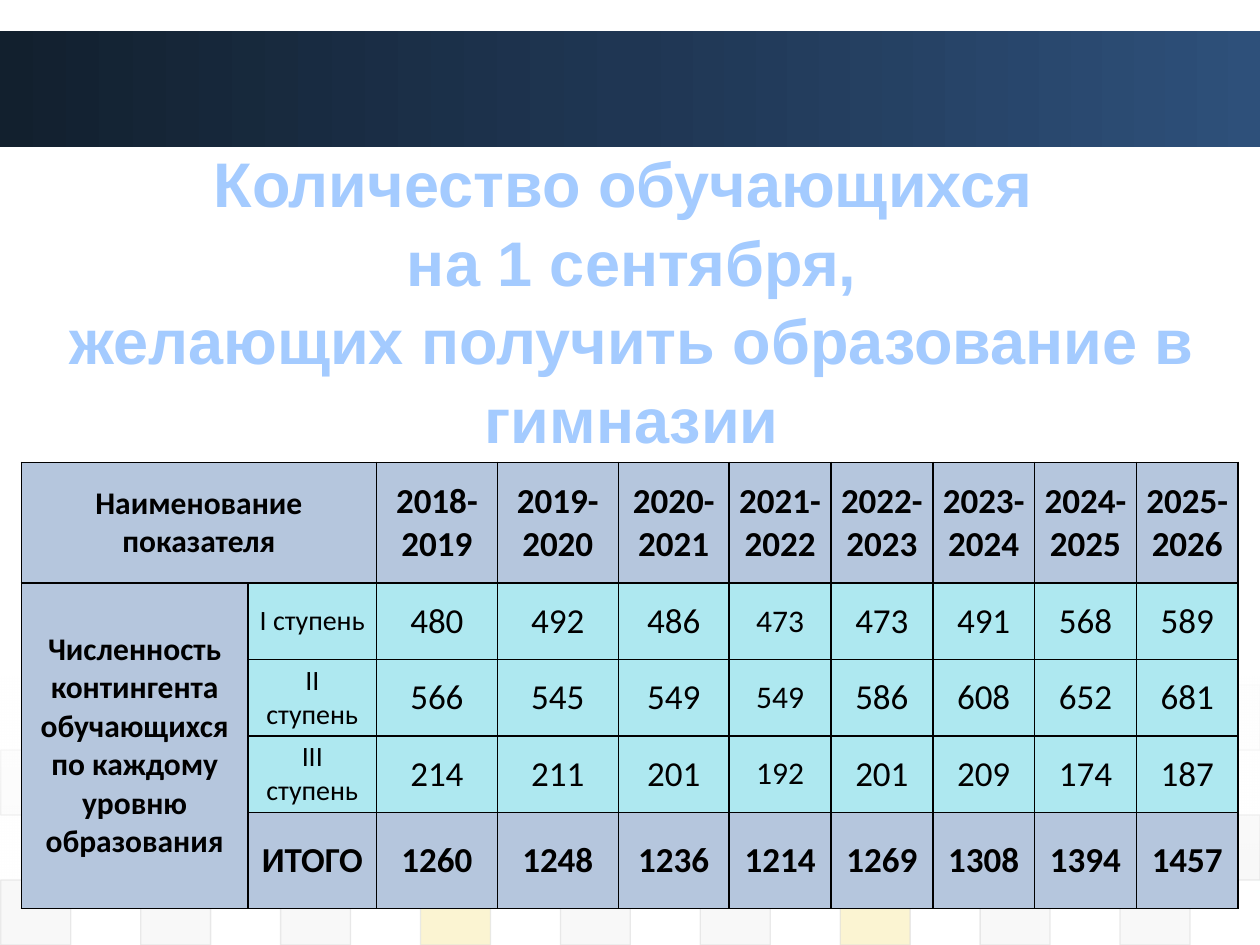
"""Build a slide with a table of pupil numbers by school year."""
import copy
import dataclasses

import lxml.etree
import pptx
import pptx.dml.color
import pptx.enum.shapes
import pptx.enum.text
import pptx.oxml.ns
import pptx.util

Pt = pptx.util.Pt
qn = pptx.oxml.ns.qn
RGB = pptx.dml.color.RGBColor.from_string


@dataclasses.dataclass(frozen=True)
class Theme:
    """Hold the colours, fonts and type sizes."""
    white: str = "FFFFFF"
    black: str = "000000"
    sky: str = "A4CBFF"
    head: str = "B5C6DD"
    body: str = "AEE8F0"
    edge: str = "DDDDDD"
    band: tuple = ((0, "12202E", 100), (50, "1F3653", 100), (100, "2E507A", 100))
    veil: tuple = ((0, "FFFFFF", 90), (100, "FFFFFF", 0))
    title_font: str = "Arial"
    table_font: str = "Calibri"
    title: int = 36
    large: int = 20
    mid: int = 18
    small: int = 16


THEME = Theme()
TILES = {"D": "DDDDDD", "E": "EAEAEA", "G": "8AC246", "Y": "EFC821"}
MOSAIC = [("YEEYDYEGE", 1, 5), ("DDDDGDDDY", 0, 10),
          ("DGDDDDGDD", 1, 20), ("DDDYDDYDD", 0, 20)]
TITLE = ("Количество обучающихся \vна 1 сентября,\v"
         "желающих получить образование в гимназии")
YEARS = [f"{year}-{year + 1}" for year in range(2018, 2026)]
TOPIC = "Численность контингента обучающихся по каждому уровню образования"
ROWS = [
    ["Наименование показателя", ""] + YEARS,
    [TOPIC, "I ступень", 480, 492, 486, 473, 473, 491, 568, 589],
    ["", "II ступень", 566, 545, 549, 549, 586, 608, 652, 681],
    ["", "III ступень", 214, 211, 201, 192, 201, 209, 174, 187],
    ["", "ИТОГО", 1260, 1248, 1236, 1214, 1269, 1308, 1394, 1457],
]
WIDTHS = [129.6, 73.4, 69.1, 69.1, 63.4] + [58.2] * 5
HEIGHTS = [69, 43.7, 43.7, 43.7, 55]
ODD_COL = 5


def write(frame, text, size, font, color, bold=False, space=None):
    """Put centred, formatted text into a text frame."""
    frame.word_wrap = True
    para = frame.paragraphs[0]
    para.text = text
    para.alignment = pptx.enum.text.PP_ALIGN.CENTER
    para.line_spacing = space
    for run in para.runs:
        run.font.size = Pt(size)
        run.font.name = font
        run.font.bold = bold
        run.font.color.rgb = RGB(color)
    for gap in para._p.findall(qn("a:br")):
        gap.append(copy.deepcopy(para.runs[0]._r.rPr))


def fade(node, share):
    """Give a colour element an opacity in percent."""
    lxml.etree.SubElement(node, qn("a:alpha"), val=str(share * 1000))


def block(slide, box):
    """Add a plain rectangle without line or shadow."""
    kind = pptx.enum.shapes.MSO_SHAPE.RECTANGLE
    shape = slide.shapes.add_shape(kind, *map(Pt, box))
    shape.shadow.inherit = False
    shape.line.fill.background()
    return shape


def blend(slide, box, stops, angle):
    """Add a rectangle with a linear gradient."""
    shape = block(slide, box)
    shape.fill.gradient()
    shape.fill.gradient_angle = angle
    chain = shape._element.spPr.find(".//" + qn("a:gsLst"))
    for stop in list(chain):
        chain.remove(stop)
    for place, color, share in stops:
        stop = lxml.etree.SubElement(chain, qn("a:gs"), pos=str(place * 1000))
        fade(lxml.etree.SubElement(stop, qn("a:srgbClr"), val=color), share)


def mosaic(slide, box):
    """Lay pale tiles in a checker pattern over the box."""
    left, top, width, height = box
    wide, high = width / 18, height / len(MOSAIC)
    for row, (codes, shift, share) in enumerate(MOSAIC):
        for col, code in enumerate(codes):
            spot = left + (2 * col + shift) * wide, top + row * high
            tile = block(slide, (*spot, wide, high))
            tile.fill.solid()
            tile.fill.fore_color.rgb = RGB(TILES[code])
            tile.line.color.rgb = RGB(THEME.edge)
            tile.line.width = Pt(0.75)
            inner, outer = tile._element.spPr.iter(qn("a:srgbClr"))
            fade(inner, share)
            fade(outer, 60)


def heading(slide, box):
    """Move and fill the title placeholder."""
    title = slide.shapes.title
    title.left, title.top, title.width, title.height = map(Pt, box)
    frame = title.text_frame
    frame.auto_size = pptx.enum.text.MSO_AUTO_SIZE.NONE
    frame.vertical_anchor = pptx.enum.text.MSO_ANCHOR.MIDDLE
    write(frame, TITLE, THEME.title, THEME.title_font, THEME.sky, bold=True, space=1.04)


def border(cell):
    """Draw a thin black line on each side of a cell."""
    props = cell._tc.get_or_add_tcPr()
    for place, side in enumerate(("lnL", "lnR", "lnT", "lnB")):
        line = lxml.etree.Element(qn("a:" + side), w=str(Pt(1)))
        fill = lxml.etree.SubElement(line, qn("a:solidFill"))
        lxml.etree.SubElement(fill, qn("a:srgbClr"), val=THEME.black)
        props.insert(place, line)


def style(row, col):
    """Return the type size, weight and fill for a cell."""
    strong = row in (0, len(ROWS) - 1) or col == 0
    if col == 0:
        size = THEME.mid
    elif strong:
        size = THEME.large
    elif col == 1:
        size = THEME.small
    else:
        size = THEME.mid if col == ODD_COL else THEME.large
    return size, strong, THEME.head if strong else THEME.body


def grid(slide, box):
    """Add the table of pupil numbers."""
    table = slide.shapes.add_table(len(ROWS), len(WIDTHS), *map(Pt, box)).table
    table.first_row = table.horz_banding = False
    for col, width in zip(table.columns, WIDTHS):
        col.width = Pt(width * box[2] / sum(WIDTHS))
    for row, height in zip(table.rows, HEIGHTS):
        row.height = Pt(height * box[3] / sum(HEIGHTS))
    table.cell(0, 0).merge(table.cell(0, 1))
    table.cell(1, 0).merge(table.cell(len(ROWS) - 1, 0))
    for y, row in enumerate(ROWS):
        for x, value in enumerate(row):
            cell = table.cell(y, x)
            size, bold, fill = style(y, x)
            cell.fill.solid()
            cell.fill.fore_color.rgb = RGB(fill)
            cell.margin_left = cell.margin_right = Pt(5)
            cell.margin_top = cell.margin_bottom = Pt(0)
            cell.vertical_anchor = pptx.enum.text.MSO_ANCHOR.MIDDLE
            border(cell)
            if not cell.is_spanned:
                write(cell.text_frame, str(value), size, THEME.table_font,
                      THEME.black, bold=bold)


def main():
    """Build and save the slide."""
    deck = pptx.Presentation()
    deck.slide_width, deck.slide_height = Pt(720), Pt(540)
    slide = deck.slides.add_slide(deck.slide_layouts[5])
    slide.background.fill.solid()
    slide.background.fill.fore_color.rgb = RGB(THEME.white)
    blend(slide, (0, 18, 720, 66), THEME.band, 0)
    mosaic(slide, (0.5, 391.5, 719.5, 148.5))
    blend(slide, (0, 386.6, 720, 116.6), THEME.veil, 270)
    heading(slide, (12.2, 134, 697.7, 73.4))
    grid(slide, (12.2, 264.2, 695.5, 255))
    deck.save("out.pptx")


if __name__ == "__main__":
    main()
